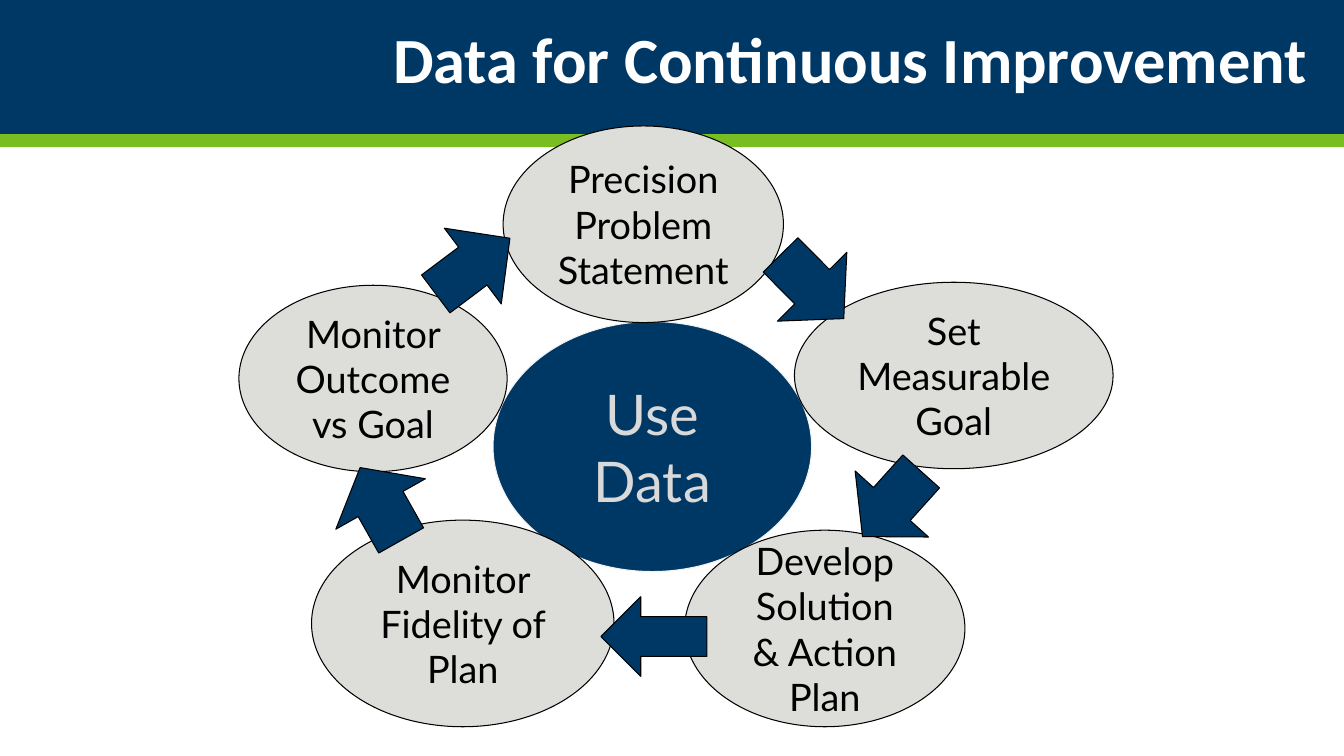
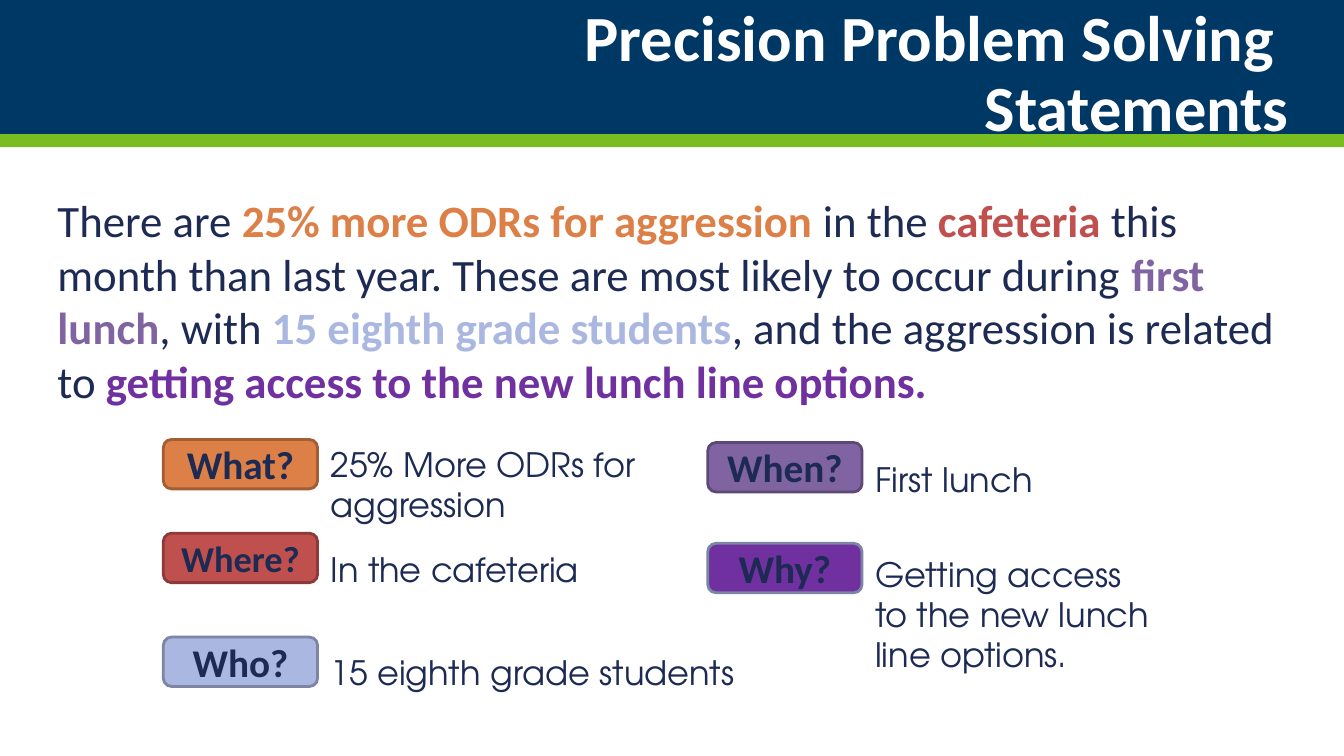
from lxml.etree import SubElement
from pptx import Presentation
from pptx.dml.color import RGBColor
from pptx.enum.shapes import MSO_SHAPE
from pptx.enum.text import MSO_ANCHOR, MSO_AUTO_SIZE, PP_ALIGN
from pptx.oxml.ns import qn
from pptx.util import Inches, Pt

COLORS = {
    "navy": "003865", "green": "78BE21", "white": "FFFFFF", "black": "000000",
    "stone": "DDDDDA", "silver": "D9D9D9", "pale": "F3F3F3", "ink": "1D2A53",
    "orange": "DD8047", "orange_edge": "A15D33", "red": "C0504D", "red_edge": "8C3A38",
    "violet": "8064A2", "violet_edge": "5D4876", "blue": "AAB7E1", "blue_edge": "7C85A4",
    "purple": "7030A0",
}
SLIDE_WIDTH, SLIDE_HEIGHT = 13.33, 7.5


def rgb(name):
    """Return the named palette colour."""
    return RGBColor.from_string(COLORS[name])


def place(shape, left, top, width, height):
    """Move and size a shape, in inches."""
    shape.left, shape.top = Inches(left), Inches(top)
    shape.width, shape.height = Inches(width), Inches(height)


def write_text(shape, paragraphs, *, font, size, color, bold=False, align=PP_ALIGN.LEFT,
               anchor=MSO_ANCHOR.TOP, inset=0.07, spacing=1.0):
    """Write paragraphs of (text, accent colour) runs; accented runs are bold."""
    frame = shape.text_frame
    frame.word_wrap = True
    frame.auto_size = MSO_AUTO_SIZE.NONE
    frame.vertical_anchor = anchor
    frame.margin_left = frame.margin_right = Inches(0.13)
    frame.margin_top = frame.margin_bottom = Inches(inset)
    for index, runs in enumerate(paragraphs):
        paragraph = frame.add_paragraph() if index else frame.paragraphs[0]
        paragraph.alignment = align
        paragraph.line_spacing = spacing
        paragraph.space_before = Pt(0)
        for text, accent in runs:
            run = paragraph.add_run()
            run.text = text
            run.font.name = font
            run.font.size = Pt(size)
            run.font.bold = bold or accent is not None
            run.font.color.rgb = rgb(accent or color)


def add_figure(slide, kind, box, fill, edge=None, weight=0.75, rotation=0):
    """Add a flat preset shape."""
    shape = slide.shapes.add_shape(kind, *map(Inches, box))
    shape.shadow.inherit = False
    shape.rotation = rotation
    shape.fill.solid()
    shape.fill.fore_color.rgb = rgb(fill)
    if edge:
        shape.line.color.rgb = rgb(edge)
        shape.line.width = Pt(weight)
    else:
        shape.line.fill.background()
    return shape


def add_master_bands(slide):
    """Put the header bands on the master behind every slide."""
    master_tree = slide.slide_layout.slide_master.shapes.element
    bands = [(0, 1.33, "navy"), (1.33, 0.13, "green")]
    for position, (top, height, fill) in enumerate(bands, start=2):
        band = add_figure(slide, MSO_SHAPE.RECTANGLE, (0, top, SLIDE_WIDTH, height), fill)
        master_tree.insert(position, band.element)


def set_title(slide, lines, box):
    """Fill the title placeholder with right-aligned lines."""
    title = slide.shapes.title
    place(title, *box)
    write_text(title, [[(line, None)] for line in lines], font="Calibri", size=46,
               color="white", bold=True, align=PP_ALIGN.RIGHT,
               anchor=MSO_ANCHOR.MIDDLE, spacing=0.9)


def add_oval(slide, text, box, fill="stone", edge="black", size=27, color="black"):
    """Add an ellipse with centred text."""
    oval = add_figure(slide, MSO_SHAPE.OVAL, box, fill, edge)
    write_text(oval, [[(text, None)]], font="Lato", size=size, color=color,
               align=PP_ALIGN.CENTER, anchor=MSO_ANCHOR.MIDDLE, inset=0.13)


def add_cycle(slide, left, top):
    """Draw the improvement cycle from its top left corner."""
    add_oval(slide, "Use Data", (left + 2.52, top + 1.94, 3.16, 2.48),
             fill="navy", edge="pale", size=40, color="silver")
    steps = [
        ("Precision Problem Statement", 2.62, 0, 2.78, 1.95),
        ("Set Measurable Goal", 5.51, 1.55, 3.16, 1.85),
        ("Develop Solution & Action Plan", 4.42, 4.01, 2.78, 1.95),
        ("Monitor Fidelity of Plan", 0.72, 3.91, 3, 2.05),
        ("Monitor Outcome vs Goal", 0, 1.58, 2.66, 1.85),
    ]
    for text, x, y, width, height in steps:
        add_oval(slide, text, (left + x, top + y, width, height))
    arrows = [
        (5.24, 1.11, 0.89, 0.97, 45.2),
        (6.04, 3.26, 0.87, 0.98, 132),
        (3.59, 4.67, 1.05, 0.79, 180),
        (0.99, 3.24, 0.83, 1.02, 240.6),
        (1.86, 0.92, 0.92, 0.94, 323.1),
    ]
    for x, y, width, height, rotation in arrows:
        add_figure(slide, MSO_SHAPE.RIGHT_ARROW, (left + x, top + y, width, height),
                   "navy", "black", rotation=rotation)


def set_statement(slide, runs, box):
    """Fill the body placeholder with one unbulleted paragraph."""
    body = slide.placeholders[1]
    place(body, *box)
    properties = body.text_frame.paragraphs[0]._p.get_or_add_pPr()
    properties.set("marL", "0")
    properties.set("indent", "0")
    SubElement(properties, qn("a:buNone"))
    write_text(body, [runs], font="Calibri", size=32, color="ink")


def add_answers(slide, left, rows):
    """Add a column of question tags with answers beside them."""
    tag_width, tag_height = 1.53, 0.49
    for question, size, fill, edge, top, answer, answer_top, width, height in rows:
        tag = add_figure(slide, MSO_SHAPE.ROUNDED_RECTANGLE,
                         (left, top, tag_width, tag_height), fill, edge, weight=2)
        write_text(tag, [[(question, None)]], font="Calibri", size=size, color="ink",
                   bold=True, align=PP_ALIGN.CENTER, anchor=MSO_ANCHOR.MIDDLE)
        box = (left + tag_width, answer_top, width, height)
        note = slide.shapes.add_textbox(*map(Inches, box))
        write_text(note, [[(answer, None)]], font="TeX Gyre Adventor", size=24, color="ink")


def build_cycle_slide(presentation):
    """Build the slide with the improvement cycle."""
    slide = presentation.slides.add_slide(presentation.slide_layouts[5])
    add_master_bands(slide)
    set_title(slide, ["Data for Continuous Improvement"], (2.77, 0.23, 10.32, 0.79))
    add_cycle(slide, 2.37, 1.25)


def build_statement_slide(presentation):
    """Build the slide with the precise statement and its parts."""
    slide = presentation.slides.add_slide(presentation.slide_layouts[1])
    set_title(slide, ["Precision Problem Solving ", "Statements"], (2.91, 0, 10, 1.5))
    set_statement(slide, [
        ("There are ", None),
        ("25% more ODRs for aggression ", "orange"),
        ("in the ", None),
        ("cafeteria", "red"),
        (" this month than last year. These are most likely to occur during ", None),
        ("first lunch", "violet"),
        (", with ", None),
        ("15 eighth grade students", "blue"),
        (", and the aggression is related to ", None),
        ("getting access to the new lunch line options.", "purple"),
    ], (0.44, 1.84, 12.34, 2.4))
    add_answers(slide, 1.62, [
        ("What?", 28, "orange", "orange_edge", 4.36,
         "25% More ODRs for aggression", 4.33, 3.69, 0.9),
        ("Where?", 26, "red", "red_edge", 5.29, "In the cafeteria", 5.38, 3.69, 0.5),
        ("Who?", 28, "blue", "blue_edge", 6.32, "15 eighth grade students", 6.4, 4.8, 0.5),
    ])
    add_answers(slide, 7.02, [
        ("When?", 28, "violet", "violet_edge", 4.39, "First lunch", 4.48, 3.69, 0.5),
        ("Why?", 28, "purple", "blue_edge", 5.39,
         "Getting access to the new lunch line options.", 5.42, 3.09, 1.35),
    ])


def main():
    """Build and save the presentation."""
    presentation = Presentation()
    presentation.slide_width = Inches(SLIDE_WIDTH)
    presentation.slide_height = Inches(SLIDE_HEIGHT)
    build_cycle_slide(presentation)
    build_statement_slide(presentation)
    presentation.save("out.pptx")


if __name__ == "__main__":
    main()
